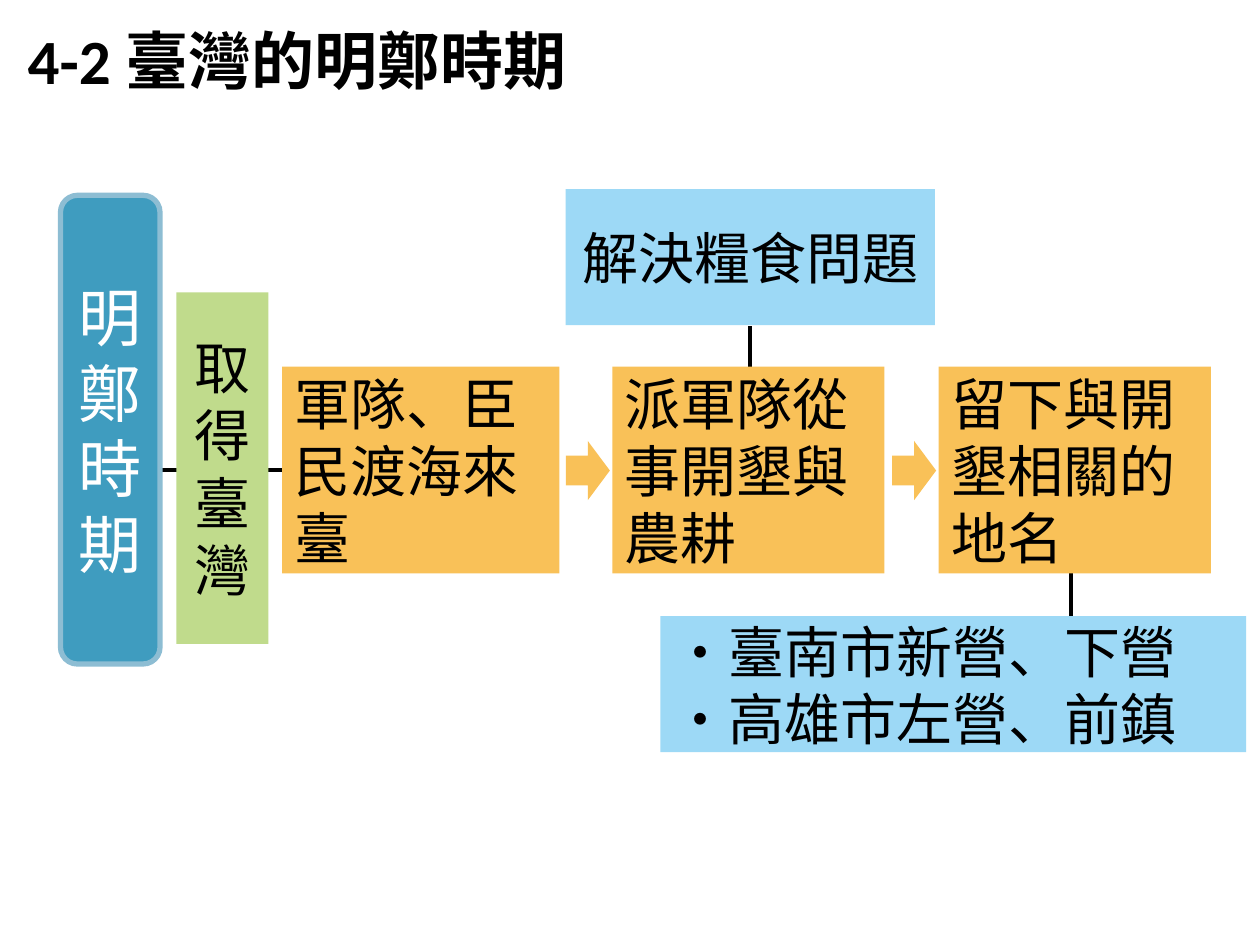
from lxml import etree
from pptx import Presentation, util as u
from pptx.dml.color import RGBColor
from pptx.enum import shapes, text
from pptx.oxml.ns import qn

CELL = u.Inches(0.1)
CJK = "Noto Sans CJK SC"
COLORS = {"ink": "000000", "white": "FFFFFF", "step": "F9C158", "note": "9DD9F6",
          "event": "C0DB8C", "era": "3F9CBF", "era_edge": "8DBDD3"}
STEPS = [(0, 22, "軍隊、臣民渡海來臺"), (26.2, 21.6, "派軍隊從事開墾與農耕"),
         (52.1, 21.6, "留下與開墾相關的地名")]


def cells(*values):
    """Convert grid cells to lengths."""
    return [u.Emu(round(v * CELL)) for v in values]


def rgb(name):
    """Return the named colour."""
    return RGBColor.from_string(COLORS[name])


def style_run(r, font=CJK, color="ink", **values):
    """Format a run, with its East Asian font."""
    for key, value in dict(values, name=font).items():
        setattr(r.font, key, value)
    r.font.color.rgb = rgb(color)
    etree.SubElement(r.font._element, qn("a:ea")).set("typeface", CJK)


def add_block(slide, box, fill, lines=(), kind="ROUNDED_RECTANGLE", round_by=0,
              size=32, color="ink", align="LEFT", edge=None):
    """Add a filled shape with optional lines of text."""
    sp = slide.shapes.add_shape(shapes.MSO_SHAPE[kind], *cells(*box))
    sp.shadow.inherit = False
    sp.fill.solid()
    sp.fill.fore_color.rgb = rgb(fill)
    if edge:
        sp.line.color.rgb, sp.line.width = rgb(edge), u.Pt(3)
    else:
        sp.line.fill.background()
    if kind == "ROUNDED_RECTANGLE":
        sp.adjustments[0] = round_by
    tf = sp.text_frame
    tf.word_wrap, tf.vertical_anchor = True, text.MSO_ANCHOR.MIDDLE
    for i, line in enumerate(lines):
        p = tf.add_paragraph() if i else tf.paragraphs[0]
        p.alignment = text.PP_ALIGN[align]
        r = p.add_run()
        r.text = line
        style_run(r, color=color, size=u.Pt(size))


def add_link(slide, *ends):
    """Add a plain black connecting line."""
    line = slide.shapes.add_connector(shapes.MSO_CONNECTOR.STRAIGHT, *cells(*ends))
    line.line.color.rgb, line.line.width = rgb("ink"), u.Pt(2.25)
    etree.SubElement(line._element.spPr, qn("a:effectLst"))


def add_title(slide, box):
    """Place and format the slide title."""
    sp = slide.shapes.title
    sp.left, sp.top, sp.width, sp.height = cells(*box)
    tf = sp.text_frame
    frame = {"word_wrap": False, "auto_size": text.MSO_AUTO_SIZE.SHAPE_TO_FIT_TEXT,
             "vertical_anchor": text.MSO_ANCHOR.TOP}
    for key, value in frame.items():
        setattr(tf, key, value)
    p = tf.paragraphs[0]
    p.alignment = text.PP_ALIGN.LEFT
    for words, font in (("4-2 ", "Calibri"), ("臺灣的明鄭時期", "Arial")):
        r = p.add_run()
        r.text = words
        style_run(r, font, size=u.Pt(36), bold=True)


def add_labels(slide, box):
    """Add the upright era and event labels, linked to the right."""
    x, y, w, h = box
    for start in (7.8, 16.3):
        add_link(slide, x + start, y + 21.8, x + start + 5.1, y + 21.8)
    add_block(slide, (x + w - 7.3, y + 7.7, 7.3, 27.9), "event", ["取得臺灣"],
              align="CENTER")
    add_block(slide, (x, y, 7.9, h), "era", ["明鄭時期"], round_by=0.17, size=36,
              color="white", align="CENTER", edge="era_edge")


def add_steps(slide, box):
    """Add the row of steps with an arrow before each later one."""
    x, y, w, h = box
    for left, width, words in STEPS:
        if left:
            add_block(slide, (x + left - 3.7, y + 5.9, 3.5, 4.7), "step",
                      kind="RIGHT_ARROW")
        add_block(slide, (x + left, y, width, h), "step", [words])


def add_note(slide, box, lines, link_x, link_y, align="LEFT"):
    """Add a note with a short upright link to its step."""
    add_link(slide, link_x, link_y, link_x, link_y + 4.7)
    add_block(slide, box, "note", lines, align=align)


def main():
    """Build the slide."""
    prs = Presentation()
    prs.slide_width, prs.slide_height = cells(100, 75)
    slide = prs.slides.add_slide(prs.slide_layouts[5])
    add_title(slide, (1.2, 1.2, 46, 7.1))
    add_labels(slide, (4.8, 15.5, 16.5, 37.2))
    add_note(slide, (44.9, 15, 29.3, 10.8), ["解決糧食問題"], 59.5, 25.9, "CENTER")
    add_note(slide, (52.4, 48.9, 46.5, 10.8),
             ["‧臺南市新營、下營", "‧高雄市左營、前鎮"], 85, 44.2)
    add_steps(slide, (22.4, 29.1, 73.7, 16.4))
    prs.save("out.pptx")


if __name__ == "__main__":
    main()
